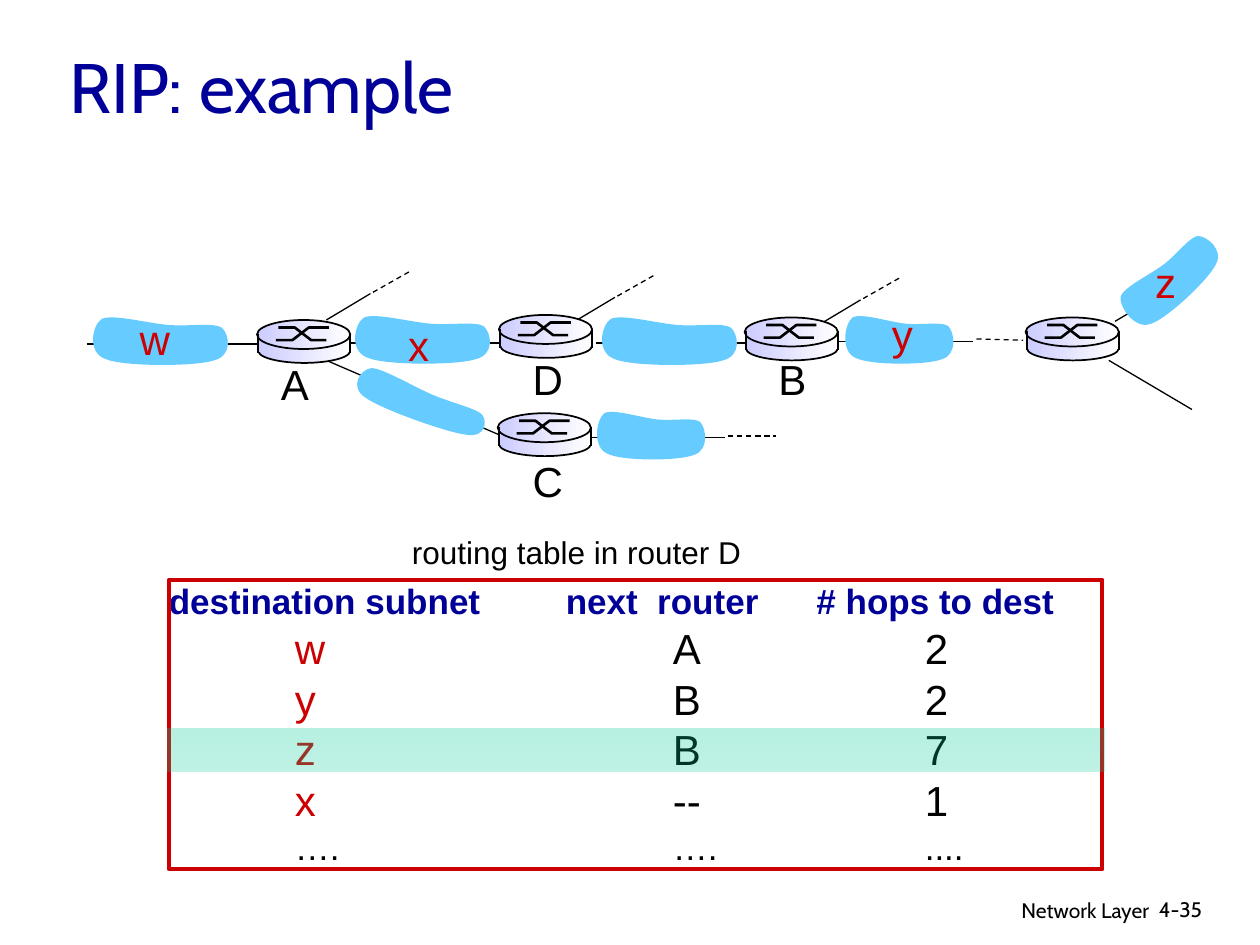
from lxml import etree
from pptx import Presentation
from pptx import util as u
from pptx.dml.color import RGBColor
from pptx.enum import dml, shapes, text
from pptx.oxml import ns

WIDE, HIGH = u.Inches(10), u.Inches(7.5)
COL, ROW = WIDE / 100, HIGH / 75
BLACK = RGBColor(0, 0, 0)
NAVY = RGBColor(0, 0, 0x99)
RED = RGBColor(0xCC, 0, 0)
SKY = RGBColor(0x66, 0xCC, 0xFF)
LILAC = RGBColor(0xCC, 0xCC, 0xFF)
WHITE = RGBColor(0xFF, 0xFF, 0xFF)
GREEN = RGBColor(0, 0xCC, 0x99)
LEFT, RIGHT = text.PP_ALIGN.LEFT, text.PP_ALIGN.RIGHT
TOP, MIDDLE = text.MSO_ANCHOR.TOP, text.MSO_ANCHOR.MIDDLE
RECT, OVAL = shapes.MSO_SHAPE.RECTANGLE, shapes.MSO_SHAPE.OVAL

CURVE = [(66, 9), (50, 8), (21, 0), (12, 4), (4, 9), (0, 31), (15, 36), (29, 42),
         (86, 42), (101, 37), (116, 33), (113, 16), (107, 11), (101, 7), (82, 10), (66, 9)]
CLOUDS = [(27.7, 24.8, 11.6, 4.2, 0), (27.6, 30.4, 11.6, 3.1, 19.7),
          (6.9, 24.9, 11.6, 4.2, 0), (47.3, 24.9, 11.6, 4.2, 0),
          (66.7, 24.8, 9.3, 4.2, 0), (88.1, 20.1, 9.5, 4.2, 316.8),
          (47, 32.4, 9.3, 4.2, 0)]
LINKS = [(66.5, 27.1, 77.2, 27.1, 0.75), (27.7, 27.2, 41.2, 27.2, 1),
         (47.3, 27.2, 60.9, 27.2, 1), (6.9, 27.3, 20.5, 27.3, 1),
         (88.5, 25.5, 95.1, 21.6, 0.75), (88, 28.6, 94.6, 32.5, 0.75),
         (25.9, 28.6, 39.6, 34.5, 0.75), (46.8, 34.7, 57.5, 34.7, 0.75)]
DASHES = [(77.5, 26.9, 81.2, 27), (57.8, 34.6, 61.6, 34.6)]
SPOKES = [(25.9, 25.4), (45.3, 25.7), (64.8, 25.9)]
NODES = [(39.6, 25), (59.1, 25.2), (81.4, 25.2), (39.5, 32.8), (20.4, 25.4)]
MARKS = [("w", 10.1, 24.4, 4.4, RED), ("x", 31.4, 24.9, 3.7, RED),
         ("y", 69.8, 24, 3.7, RED), ("z", 90.7, 19.9, 3.7, RED),
         ("A", 21.3, 28, 4.2, BLACK), ("C", 41.3, 35.7, 4.4, BLACK),
         ("D", 41.3, 27.6, 4.4, BLACK), ("B", 60.8, 27.6, 4.2, BLACK)]
HEADS = ["destination subnet", "next  router", "# hops to dest"]
ROUTES = [("w", "A", "2"), ("y", "B", "2"), ("z", "B", "7"),
          ("x", "--", "1"), ("….", "….", "....")]


def spot(x, y):
    return round(x * COL), round(y * ROW)


def box(x, y, w, h):
    return *spot(x, y), *spot(w, h)


def style(para, words, size=24, font="Arial", color=BLACK, bold=False, align=LEFT):
    para.alignment = align
    run = para.add_run()
    run.text = words
    run.font.size = u.Pt(size)
    run.font.name = font
    run.font.bold = bold
    run.font.color.rgb = color


def write(slide, place, words, wrap=True, anchor=TOP, **form):
    frame = slide.shapes.add_textbox(*box(*place)).text_frame
    frame.word_wrap = wrap
    frame.vertical_anchor = anchor
    style(frame.paragraphs[0], words, **form)


def link(tree, x1, y1, x2, y2, width=0.75, dash=False):
    wire = tree.add_connector(shapes.MSO_CONNECTOR.STRAIGHT,
                              *spot(x1, y1), *spot(x2, y2))
    wire.line.color.rgb = BLACK
    wire.line.width = u.Pt(width)
    if dash:
        wire.line.dash_style = dml.MSO_LINE.DASH
    etree.SubElement(wire._element.spPr, ns.qn("a:effectLst"))


def outline(tree, points, close):
    dots = [spot(*point) for point in points]
    build = tree.build_freeform(*dots[0])
    build.add_line_segments(dots[1:], close=close)
    form = build.convert_to_shape()
    form.shadow.inherit = False
    return form


def cloud(tree, x, y, w, h, turn):
    form = outline(tree, [(x + w * a / 116, y + h * b / 42) for a, b in CURVE], True)
    steps = list(form._element.iter(ns.qn("a:lnTo")))
    for i in range(0, len(steps), 3):
        bend = etree.Element(ns.qn("a:cubicBezTo"))
        steps[i].addprevious(bend)
        for step in steps[i:i + 3]:
            bend.append(step[0])
            step.getparent().remove(step)
    form.fill.solid()
    form.fill.fore_color.rgb = SKY
    form.line.fill.background()
    form.rotation = turn


def shade(tree, kind, place, first, last, angle=0, edge=None):
    form = tree.add_shape(kind, *box(*place))
    form.shadow.inherit = False
    form.fill.gradient()
    form.fill.gradient_angle = angle
    for stop, color in zip(form.fill.gradient_stops, (first, last)):
        stop.color.rgb = color
    if edge:
        form.line.color.rgb = BLACK
        form.line.width = u.Pt(edge)
    else:
        form.line.fill.background()
    return form


def router(slide, x, y):
    tree = slide.shapes.add_group_shape().shapes
    shade(tree, OVAL, (x + 0.1, y + 1.5, 7.3, 1.9), LILAC, WHITE, edge=1)
    shade(tree, RECT, (x + 0.1, y + 1.3, 7.4, 1.2), LILAC, WHITE)
    shade(tree, OVAL, (x, y, 7.4, 2.3), LILAC, WHITE, edge=1)
    for steps, start, end in [((1.5, 2.8, 4.1, 5.7), 1.6, 0.6),
                              ((1.7, 3, 4.3, 5.5), 0.6, 1.6)]:
        rises = (start, start, end, end)
        cross = outline(tree, [(x + a, y + b) for a, b in zip(steps, rises)], False)
        cross.fill.background()
        cross.line.color.rgb = BLACK
        cross.line.width = u.Pt(1.5)
    for side in (x + 0.1, x + 7.4):
        link(tree, side, y + 1.1, side, y + 2.6, 1)


def spoke(slide, x, y):
    tree = slide.shapes.add_group_shape().shapes
    link(tree, x, y, x + 3.5, y - 2.1)
    link(tree, x + 3.7, y - 2.2, x + 6.7, y - 3.9, dash=True)


def fill(cell, words, inset, **form):
    cell.fill.background()
    cell.margin_left = round(inset * COL)
    cell.margin_right = cell.margin_top = cell.margin_bottom = 0
    cell.vertical_anchor = MIDDLE
    style(cell.text_frame.paragraphs[0], words, **form)


def routes(slide):
    grid = slide.shapes.add_table(6, 3, *box(13.4, 46, 74.1, 23)).table
    grid.first_row = grid.horz_banding = False
    for col, wide in zip(grid.columns, (31.5, 19.9, 22.7)):
        col.width = round(wide * COL)
    for row, high in zip(grid.rows, (3.6, 4, 4, 4, 4, 3.4)):
        row.height = round(high * ROW)
    for c, head in enumerate(HEADS):
        fill(grid.cell(0, c), head, 0, size=20, color=NAVY, bold=True)
    for r, route in enumerate(ROUTES, 1):
        for c, words in enumerate(route):
            last = r == len(ROUTES)
            fill(grid.cell(r, c), words, (10, 8.5, 8.6)[c], size=20 if last else 24,
                 color=RED if c == 0 and not last else BLACK)
    frame = slide.shapes.add_shape(RECT, *box(13.4, 46, 74.1, 23))
    frame.shadow.inherit = False
    frame.fill.background()
    frame.line.color.rgb = RED
    frame.line.width = u.Pt(2.25)
    band = shade(slide.shapes, RECT, (13.3, 57.8, 74.4, 3.4), GREEN, GREEN, angle=270)
    tints = band._element.spPr.iter(ns.qn("a:srgbClr"))
    for tint, share in zip(list(tints), ("29000", "25000")):
        etree.SubElement(tint, ns.qn("a:alpha"), val=share)


def main():
    deck = Presentation()
    deck.slide_width, deck.slide_height = WIDE, HIGH
    slide = deck.slides.add_slide(deck.slide_layouts[6])
    write(slide, (4.5, 2.1, 43.1, 9.4), "RIP: example", anchor=MIDDLE,
          size=40, font="Cabin", color=NAVY)
    write(slide, (60.5, 70.7, 31.7, 3.1), "Network Layer",
          size=12, font="Cabin", align=RIGHT)
    write(slide, (91, 70.7, 7.4, 3), "4-35", size=12, font="Cabin")
    write(slide, (31.7, 41.8, 28.1, 4), "routing table in router D", wrap=False, size=18)
    routes(slide)
    for wire in LINKS:
        link(slide.shapes, *wire)
    for wire in DASHES:
        link(slide.shapes, *wire, dash=True)
    for place in CLOUDS:
        cloud(slide.shapes, *place)
    for place in SPOKES:
        spoke(slide, *place)
    for place in NODES:
        router(slide, *place)
    for words, x, y, w, color in MARKS:
        write(slide, (x, y, w, 5), words, wrap=False, color=color)
    deck.save("out.pptx")


if __name__ == "__main__":
    main()
